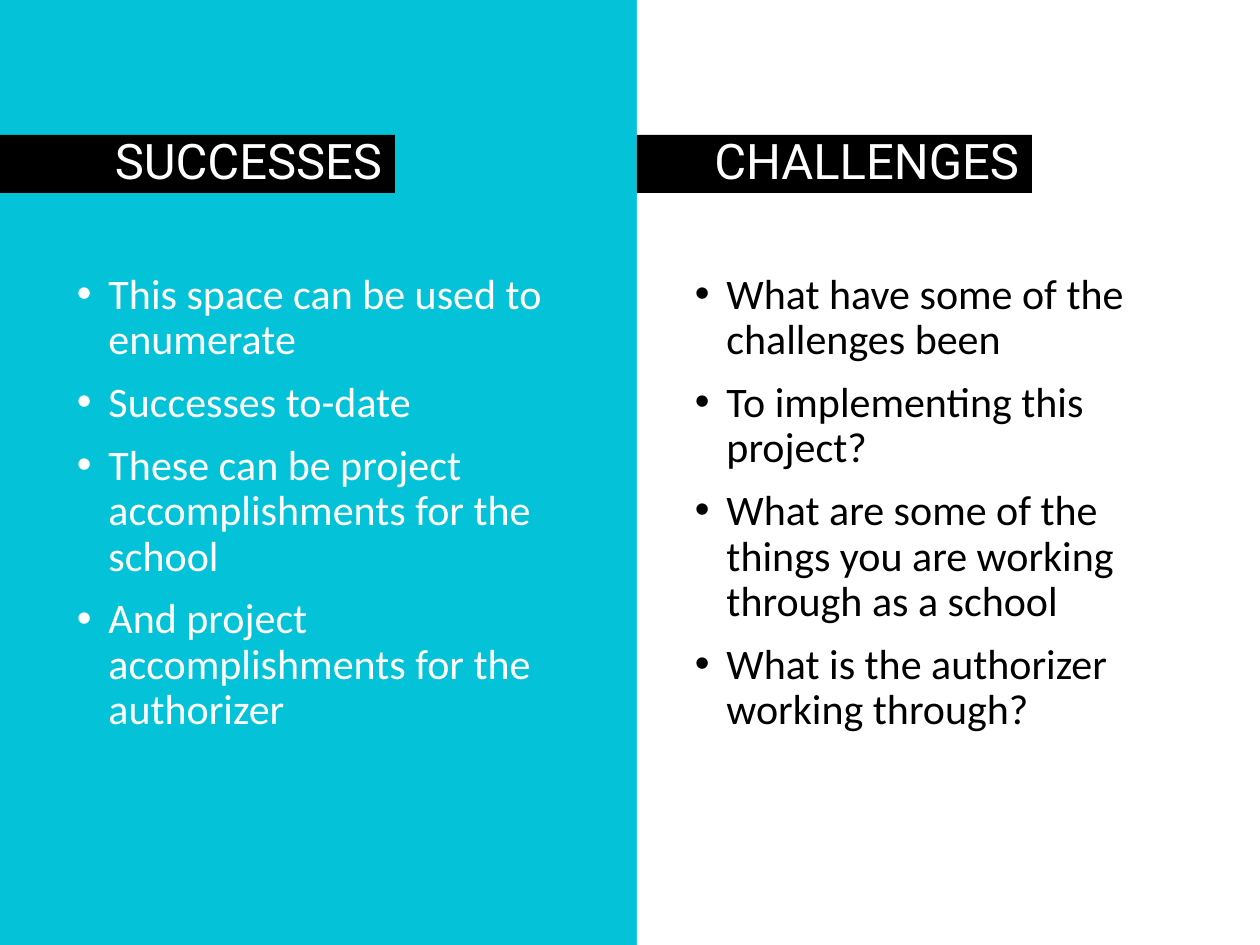
from lxml import etree
from pptx import Presentation
from pptx import util as u
from pptx.dml.color import RGBColor
from pptx.enum import shapes, text
from pptx.oxml.ns import qn

CYAN = RGBColor(0x04, 0xC3, 0xD8)
WHITE = RGBColor(0xFF, 0xFF, 0xFF)
BLACK = RGBColor(0x00, 0x00, 0x00)


def px(length):
    return u.Emu(round(length * 914400 / 126))


def write(frame, lines, font="Calibri", size=24, color=BLACK, align=text.PP_ALIGN.LEFT,
          anchor=text.MSO_ANCHOR.TOP, left_inset=13, bullet=False, gap=0):
    frame.word_wrap = True
    frame.vertical_anchor = anchor
    frame.margin_left, frame.margin_right = px(left_inset), px(13)
    frame.margin_top = frame.margin_bottom = px(6)
    for i, line in enumerate(lines):
        paragraph = frame.paragraphs[0] if i == 0 else frame.add_paragraph()
        paragraph.text = line
        paragraph.alignment = align
        paragraph.line_spacing = 0.9
        paragraph.space_before = u.Pt(gap if i else 0)
        if bullet:
            props = paragraph._p.get_or_add_pPr()
            props.set("marL", str(u.Inches(0.25)))
            props.set("indent", str(u.Inches(-0.25)))
            etree.SubElement(props, qn("a:buFont")).set("typeface", "Arial")
            etree.SubElement(props, qn("a:buChar")).set("char", "•")
        paragraph.font.name = font
        paragraph.font.size = u.Pt(size)
        paragraph.font.color.rgb = color


prs = Presentation()
prs.slide_width, prs.slide_height = px(1260), px(945)
slide = prs.slides.add_slide(prs.slide_layouts[6])
slide.background.fill.solid()
slide.background.fill.fore_color.rgb = CYAN

columns = [
    ("SUCCESSES", 0, 64, WHITE, [
        "This space can be used to enumerate",
        "Successes to-date",
        "These can be project accomplishments for the school",
        "And project accomplishments for the authorizer",
    ]),
    ("CHALLENGES", 637, 682, BLACK, [
        "What have some of the challenges been",
        "To implementing this project?",
        "What are some of the things you are working through as a school",
        "What is the authorizer working through?",
    ]),
]

challenges_panel = slide.shapes.add_shape(
    shapes.MSO_SHAPE.RECTANGLE, px(637), px(0), px(623), px(945))
challenges_panel.shadow.inherit = False
challenges_panel.fill.solid()
challenges_panel.fill.fore_color.rgb = WHITE
challenges_panel.line.fill.background()

for heading, heading_left, points_left, points_color, points in columns:
    banner = slide.shapes.add_shape(
        shapes.MSO_SHAPE.RECTANGLE, px(heading_left), px(135), px(395), px(58))
    banner.shadow.inherit = False
    banner.fill.solid()
    banner.fill.fore_color.rgb = BLACK
    banner.line.fill.background()
    write(banner.text_frame, [heading], font="Roboto", size=28, color=WHITE,
          align=text.PP_ALIGN.RIGHT, anchor=text.MSO_ANCHOR.MIDDLE, left_inset=25)

    point_list = slide.shapes.add_textbox(px(points_left), px(267), px(508), px(486))
    write(point_list.text_frame, points, color=points_color, bullet=True, gap=10)

prs.save("out.pptx")
